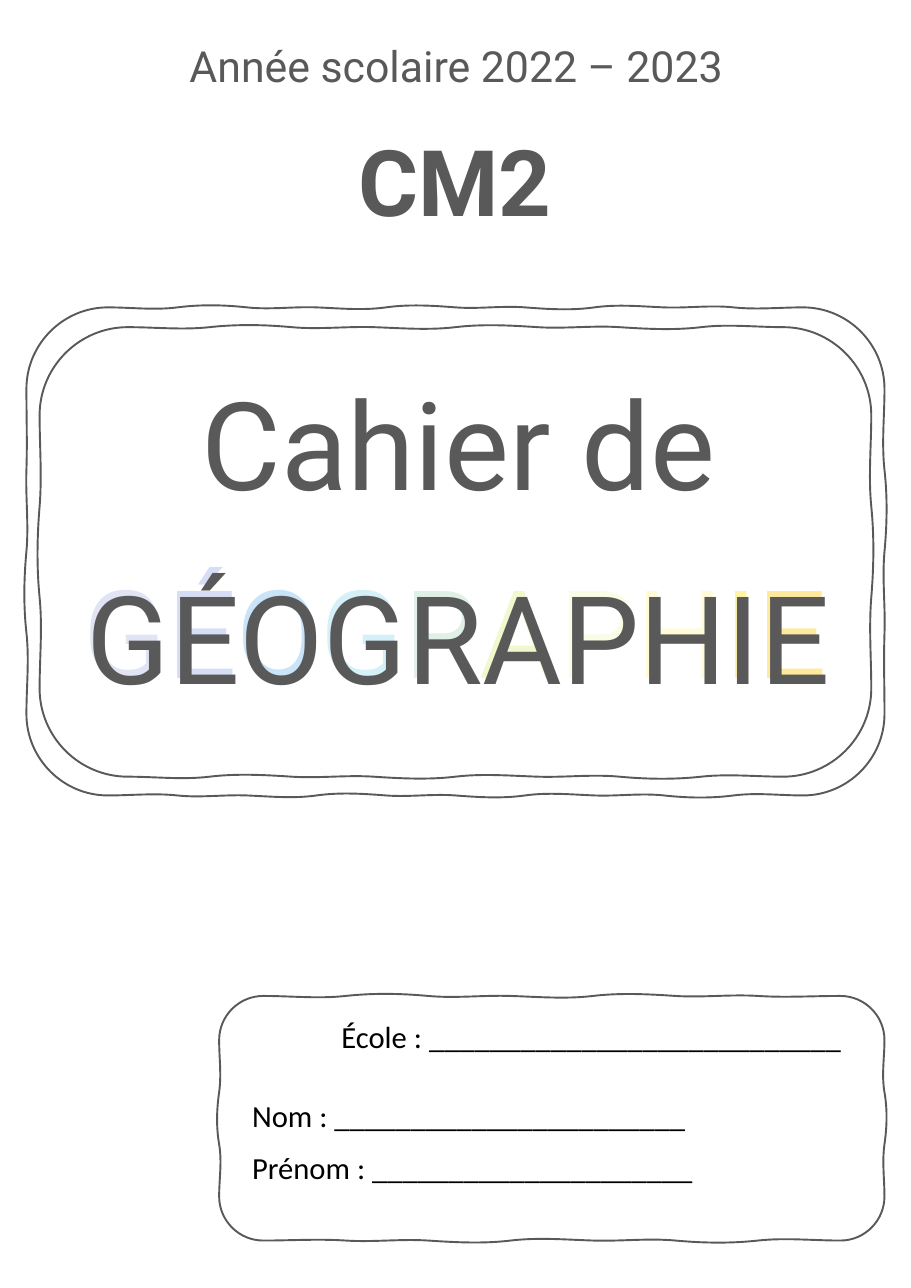
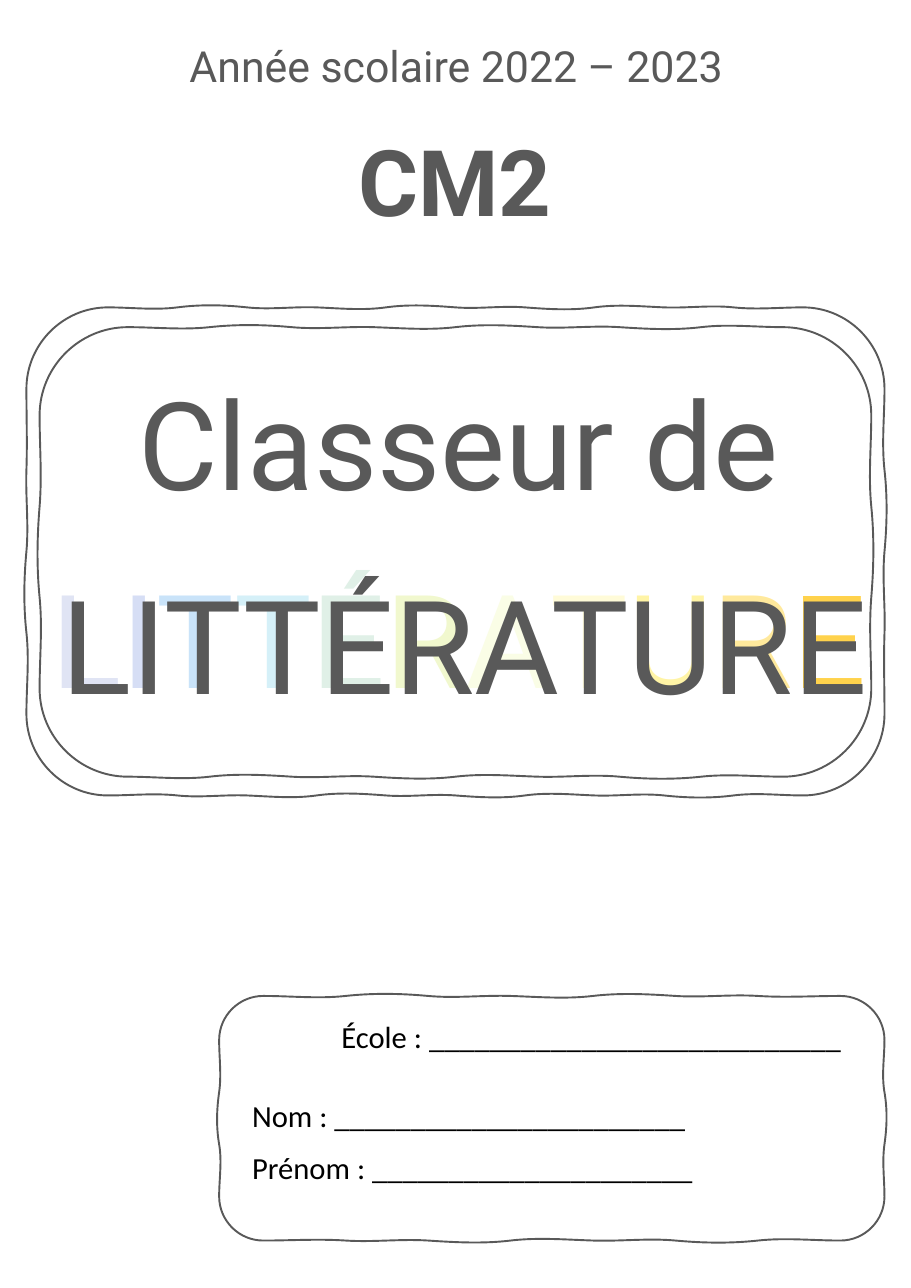
from dataclasses import dataclass
from math import sin

from lxml import etree
from pptx import Presentation
from pptx.dml.color import RGBColor
from pptx.enum.text import MSO_AUTO_SIZE, PP_ALIGN
from pptx.oxml.ns import qn
from pptx.util import Inches, Pt

CENTER = PP_ALIGN.CENTER
LEFT = PP_ALIGN.LEFT
GROW = MSO_AUTO_SIZE.SHAPE_TO_FIT_TEXT
ROUND_HANDLE = 0.55    # handle length of a quarter circle, per unit of radius


@dataclass(frozen=True)
class Theme:
    ink: str = "595959"
    black: str = "000000"
    pastels: tuple = ("E0E4F4", "D6DEF5", "C9E3F9", "D5F0F8", "E0F0E7", "F1F8CE",
                      "FAFDE6", "FFFBD8", "FFF4A6", "FFE99C", "FFC000")
    strong: str = "FFC000"
    strong_alpha: int = 70
    title_font: str = "Roboto"
    label_font: str = "Calibri"
    year_size: int = 28
    level_size: int = 60
    kind_size: int = 80
    label_size: int = 20
    line_width: float = 1.25
    wobble: float = 0.03


@dataclass(frozen=True)
class Box:
    left: float
    top: float
    width: float
    height: float

    def inner(self, left, top, width, height):
        return Box(self.left + left, self.top + top, width, height)


THEME = Theme()
HEADER = Box(1.22, 0.31, 5.84, 1.88)
TITLE = Box(0.24, 2.79, 7.79, 4.43)
IDENTITY = Box(1.99, 9.04, 6.04, 2.22)


def add_text(page, box, text, size, font=THEME.title_font, colors=(THEME.ink,),
             bold=False, align=CENTER, wrap=False):
    """Write text in one colour, or letter by letter in several."""
    holder = page.shapes.add_textbox(Inches(box.left), Inches(box.top),
                                     Inches(box.width), Inches(box.height))
    frame = holder.text_frame
    frame.word_wrap = wrap
    frame.auto_size = GROW
    para = frame.paragraphs[0]
    para.alignment = align
    parts = [text] if len(colors) == 1 else text
    for part, color in zip(parts, colors):
        span = para.add_run()
        span.text = part
        span.font.name = font
        span.font.size = Pt(size)
        span.font.bold = bold
        span.font.color.rgb = RGBColor.from_string(color)
        if color == THEME.strong:
            tint = para._p.findall(".//" + qn("a:srgbClr"))[-1]
            alpha = etree.SubElement(tint, qn("a:alpha"))
            alpha.set("val", str(THEME.strong_alpha * 1000))


def wobbly_side(corner, direction, length, radius, waves):
    """Give two handles and an end for each wave, then for the round corner."""
    (x, y), (dx, dy) = corner, direction

    def point(along, outward):
        return x + dx * along + dy * outward, y + dy * along - dx * outward

    # Each joint tilts the line; equal and opposite handles keep it smooth
    step = (length - 2 * radius) / waves
    tilts = [THEME.wobble * sin(2 * joint) for joint in range(waves)] + [0]
    points = []
    for wave in range(waves):
        begin = radius + wave * step
        points += [point(begin + step / 3, tilts[wave]),
                   point(begin + step * 2 / 3, -tilts[wave + 1]),
                   point(begin + step, 0)]
    rest = radius * (1 - ROUND_HANDLE)
    return points + [point(length - rest, 0), point(length, -rest), point(length, -radius)]


def add_wobbly_frame(page, box, radius, waves_across, waves_down):
    """Draw a hand-drawn rounded rectangle, clockwise from its top left corner."""
    right, bottom = box.left + box.width, box.top + box.height
    sides = (((box.left, box.top), (1, 0), box.width, waves_across),
             ((right, box.top), (0, 1), box.height, waves_down),
             ((right, bottom), (-1, 0), box.width, waves_across),
             ((box.left, bottom), (0, -1), box.height, waves_down))
    points = [(box.left + radius, box.top)]
    for corner, direction, length, waves in sides:
        points += wobbly_side(corner, direction, length, radius, waves)
    placed = [(Inches(x), Inches(y)) for x, y in points]
    builder = page.shapes.build_freeform(*placed[0])
    builder.add_line_segments(placed[1:], close=True)
    shape = builder.convert_to_shape()
    shape.shadow.inherit = False
    shape.fill.background()
    shape.line.color.rgb = RGBColor.from_string(THEME.ink)
    shape.line.width = Pt(THEME.line_width)
    join_into_curves(shape)


def join_into_curves(shape):
    """Turn each three straight segments into one Bézier curve."""
    segments = list(shape._element.iter(qn("a:lnTo")))
    for curve, *others in zip(segments[::3], segments[1::3], segments[2::3]):
        curve.tag = qn("a:cubicBezTo")
        for other in others:
            curve.append(other[0])
            other.getparent().remove(other)


def add_header(page, box):
    add_text(page, box.inner(0, 0, box.width, 0.57), "Année scolaire 2022 – 2023",
             THEME.year_size)
    add_text(page, box.inner(1.83, 0.77, 2.16, 1.11), "CM2", THEME.level_size, bold=True)


def add_title(page, box, kind, subject, size, left, top, shift):
    # Double frame
    add_wobbly_frame(page, box, radius=0.74, waves_across=10, waves_down=4)
    add_wobbly_frame(page, box.inner(0.12, 0.18, 7.55, 4.08),
                     radius=0.8, waves_across=8, waves_down=3)
    # Kind of book, then its subject in dark letters over shifted pastel ones
    add_text(page, box.inner(0.33, 0.5, 7.19, 1.45), kind, THEME.kind_size)
    word_box = box.inner(left, top, 7.73, size * 0.018)
    pastel_box = word_box.inner(-shift, -0.05, word_box.width, word_box.height)
    add_text(page, pastel_box, subject, size, colors=THEME.pastels)
    add_text(page, word_box, subject, size)


def add_identity(page, box):
    add_wobbly_frame(page, box, radius=0.4, waves_across=7, waves_down=3)
    # Label, number of underscores, place in the box
    for label, blanks, left, top, width in (("École", 27, 1.01, 0.15, 4.78),
                                            ("Nom", 23, 0.2, 0.87, 4.76),
                                            ("Prénom", 21, 0.2, 1.34, 4.23)):
        add_text(page, box.inner(left, top, width, 0.44), f"{label} : {'_' * blanks}",
                 THEME.label_size, font=THEME.label_font, colors=(THEME.black,), align=LEFT)


def add_cover(deck, **title):
    page = deck.slides.add_slide(deck.slide_layouts[6])
    add_header(page, HEADER)
    add_title(page, TITLE, **title)
    add_identity(page, IDENTITY)


def main():
    deck = Presentation()
    deck.slide_width, deck.slide_height = Inches(8.27), Inches(11.69)
    add_cover(deck, kind="Cahier de", subject="GÉOGRAPHIE", size=80,
              left=0.06, top=2.26, shift=0.03)
    add_cover(deck, kind="Classeur de", subject="LITTÉRATURE", size=85,
              left=0.11, top=2.28, shift=0.05)
    deck.save("out.pptx")


if __name__ == "__main__":
    main()
